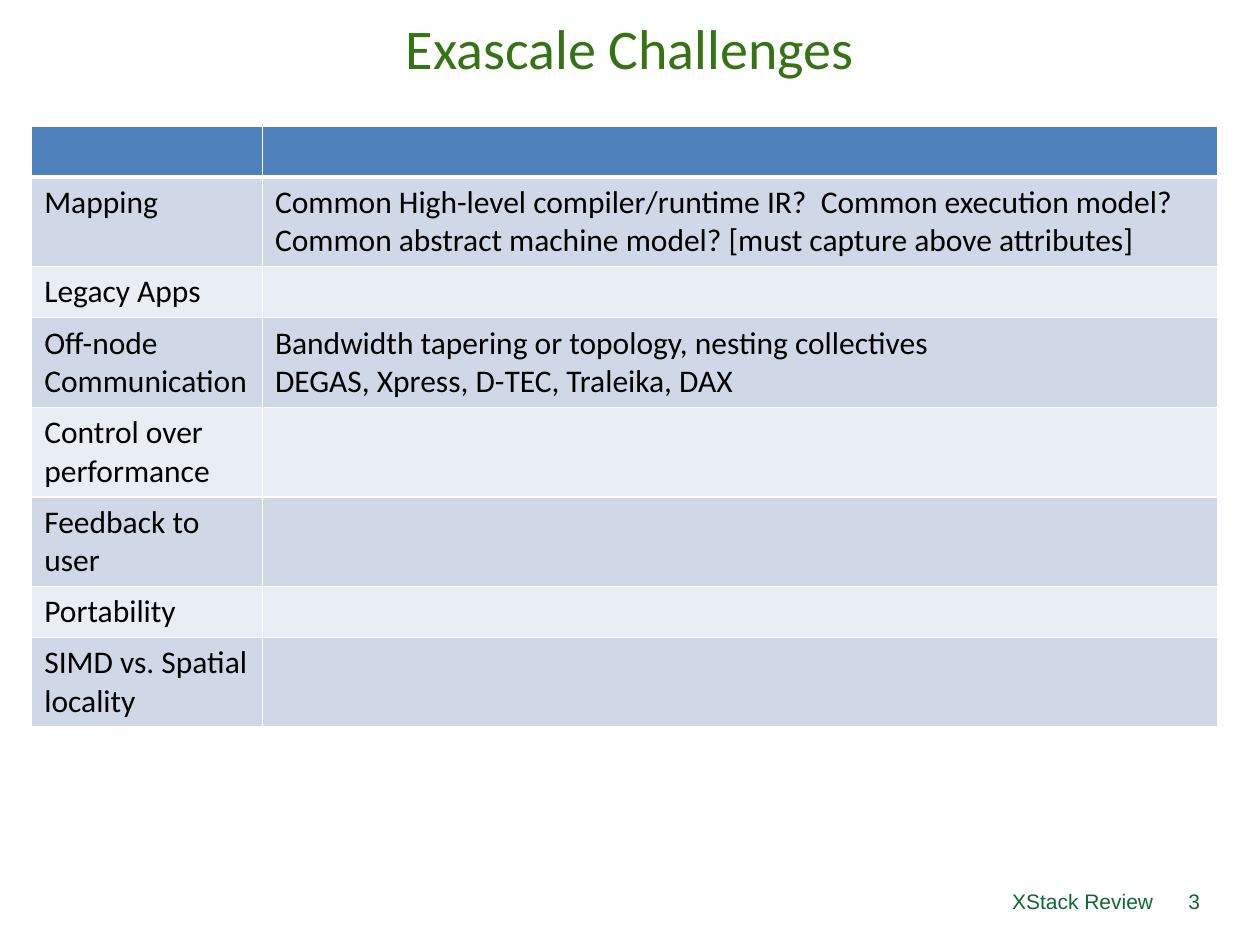
from dataclasses import dataclass

import lxml.etree
import pptx
import pptx.dml.color
import pptx.enum.text
import pptx.oxml.ns
import pptx.presentation
import pptx.slide
import pptx.table
import pptx.text.text
import pptx.util
from pptx.dml.color import RGBColor
from pptx.util import Cm

WHITE = RGBColor(0xFF, 0xFF, 0xFF)
BLACK = RGBColor(0x00, 0x00, 0x00)
HEADER_BLUE = RGBColor(0x4F, 0x81, 0xBD)
BAND_DARK = RGBColor(0xD0, 0xD8, 0xE8)
BAND_LIGHT = RGBColor(0xE9, 0xED, 0xF4)
TITLE_GREEN = RGBColor(0x36, 0x73, 0x17)
FOOTER_GREEN = RGBColor(0x10, 0x66, 0x36)

CENTER = pptx.enum.text.PP_ALIGN.CENTER
RIGHT = pptx.enum.text.PP_ALIGN.RIGHT


@dataclass
class Label:
    text: str
    left: float
    top: float
    width: float
    height: float
    font: str
    size: int
    color: RGBColor
    alignment: pptx.enum.text.PP_ALIGN


@dataclass
class Challenge:
    name: str
    notes: tuple[str, ...] = ()


LABELS = [
    Label("Exascale Challenges", 0, 0, 25.4, 1.9, "Calibri", 32, TITLE_GREEN, CENTER),
    Label("3", 23.37, 17.65, 1.07, 1.02, "Arial", 12, FOOTER_GREEN, RIGHT),
    Label("XStack Review", 8.69, 17.65, 14.81, 1.02, "Arial", 12, FOOTER_GREEN, RIGHT),
]

CHALLENGES = [
    Challenge("Mapping", (
        "Common High-level compiler/runtime IR?  Common execution model? "
        "Common abstract machine model? [must capture above attributes]",
    )),
    Challenge("Legacy Apps"),
    Challenge("Off-node Communication", (
        "Bandwidth tapering or topology, nesting collectives",
        "DEGAS, Xpress, D-TEC, Traleika, DAX",
    )),
    Challenge("Control over performance"),
    Challenge("Feedback to user"),
    Challenge("Portability"),
    Challenge("SIMD vs. Spatial locality"),
]

COLUMN_WIDTHS = (4.65, 19.25)
ROW_HEIGHT = 1.03


def add_run(paragraph: pptx.text.text._Paragraph, text: str, font: str,
            size: int, color: RGBColor) -> None:
    run = paragraph.add_run()
    run.text = text
    run.font.name = font
    run.font.size = pptx.util.Pt(size)
    run.font.color.rgb = color


def add_label(slide: pptx.slide.Slide, label: Label) -> None:
    shape = slide.shapes.add_textbox(
        Cm(label.left), Cm(label.top), Cm(label.width), Cm(label.height))
    frame = shape.text_frame
    frame.word_wrap = True
    frame.vertical_anchor = pptx.enum.text.MSO_ANCHOR.MIDDLE
    paragraph = frame.paragraphs[0]
    paragraph.alignment = label.alignment
    add_run(paragraph, label.text, label.font, label.size, label.color)


def add_border(cell: pptx.table._Cell, side: str, points: int) -> None:
    properties = cell._tc.get_or_add_tcPr()
    line = lxml.etree.SubElement(
        properties, pptx.oxml.ns.qn(f"a:ln{side}"), w=str(pptx.util.Pt(points)))
    fill = lxml.etree.SubElement(line, pptx.oxml.ns.qn("a:solidFill"))
    lxml.etree.SubElement(fill, pptx.oxml.ns.qn("a:srgbClr"), val=str(WHITE))


def fill_cell(cell: pptx.table._Cell, row: int, lines: tuple[str, ...]) -> None:
    # The line under the header is the only thick one
    thick_side = {0: "B", 1: "T"}.get(row)
    for side in "LRTB":
        add_border(cell, side, 3 if side == thick_side else 1)
    cell.fill.solid()
    band = BAND_DARK if row % 2 else BAND_LIGHT
    cell.fill.fore_color.rgb = HEADER_BLUE if row == 0 else band
    frame = cell.text_frame
    for index, text in enumerate(lines):
        paragraph = frame.add_paragraph() if index else frame.paragraphs[0]
        add_run(paragraph, text, "Calibri", 18, BLACK)


def add_challenge_table(slide: pptx.slide.Slide) -> None:
    row_count = len(CHALLENGES) + 1
    shape = slide.shapes.add_table(
        row_count, len(COLUMN_WIDTHS), Cm(0.64), Cm(2.54),
        Cm(sum(COLUMN_WIDTHS)), Cm(ROW_HEIGHT * row_count))
    table = shape.table
    for column, width in zip(table.columns, COLUMN_WIDTHS):
        column.width = Cm(width)
    for row in table.rows:
        row.height = Cm(ROW_HEIGHT)

    # Empty header row, then one row per challenge
    contents = [((), ())] + [((item.name,), item.notes) for item in CHALLENGES]
    for row, cells in enumerate(contents):
        for column, lines in enumerate(cells):
            fill_cell(table.cell(row, column), row, lines)


def main() -> None:
    presentation = pptx.Presentation()
    presentation.slide_width = Cm(25.4)
    presentation.slide_height = Cm(19.05)
    slide = presentation.slides.add_slide(presentation.slide_layouts[6])
    slide.background.fill.solid()
    slide.background.fill.fore_color.rgb = WHITE

    add_challenge_table(slide)

    # Title and footer
    for label in LABELS:
        add_label(slide, label)

    presentation.save("out.pptx")


if __name__ == "__main__":
    main()
